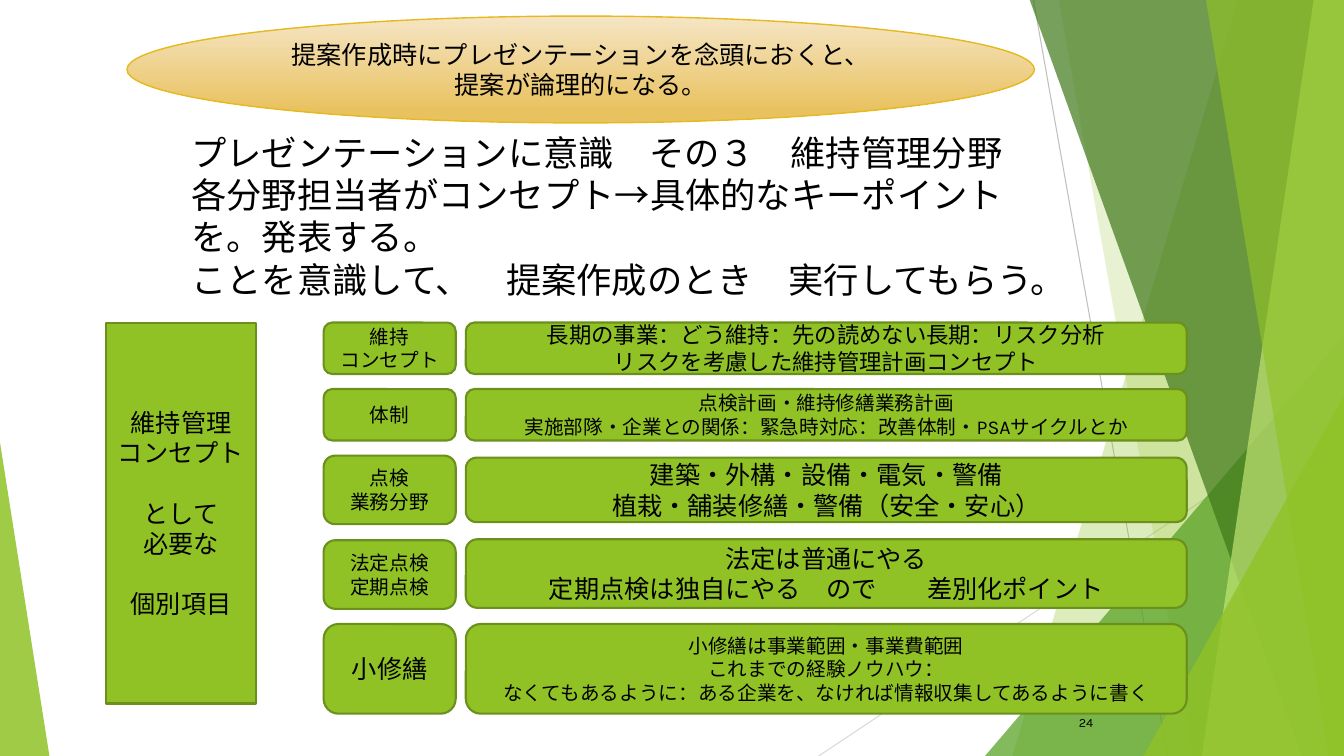
from dataclasses import dataclass

from lxml import etree
from pptx import Presentation
from pptx.dml.color import RGBColor
from pptx.enum.shapes import MSO_CONNECTOR, MSO_SHAPE as SHAPE
from pptx.enum.text import MSO_ANCHOR as ANCHOR, PP_ALIGN as ALIGN
from pptx.oxml.ns import qn
from pptx.util import Pt

PX = 9144  # EMU per px, 100 px to the inch
W, H = 1333, 750


@dataclass(frozen=True)
class Theme:
    font: str = "Karla"
    ink: str = "000000"
    green: str = "90C226"
    outline: str = "6B901C"
    leaf: str = "54A021"
    forest: str = "3F7819"
    lime: str = "C0E474"
    gold_light: str = "F5E5C5"
    gold: str = "E9C260"
    gold_line: str = "E6B91E"
    title: float = 25.2
    large: float = 18
    medium: float = 16
    small: float = 14
    number: float = 9
    blank_line: float = 21.6


T = Theme()
rgb = RGBColor.from_string


def write(sp, text, size, align=ALIGN.CENTER, anchor=ANCHOR.MIDDLE):
    """Write one paragraph per line; an empty line becomes space before the next."""
    tf = sp.text_frame
    tf.word_wrap = True
    tf.vertical_anchor = anchor
    for i, block in enumerate(text.split("\n\n")):
        for j, line in enumerate(block.split("\n")):
            p = tf.add_paragraph() if i or j else tf.paragraphs[0]
            p.text = line
            p.alignment = align
            p.font.name, p.font.size = T.font, Pt(size)
            p.font.color.rgb = rgb(T.ink)
            if i and not j:
                p.space_before = Pt(T.blank_line)


def add_box(kind, box, text, size, line=T.outline, width=1.5):
    sp = shapes.add_shape(kind, *(v * PX for v in box))
    sp.shadow.inherit = False
    sp.fill.solid()
    sp.fill.fore_color.rgb = rgb(T.green)
    sp.line.color.rgb = rgb(line)
    sp.line.width = Pt(width)
    write(sp, text, size)
    return sp


prs = Presentation()
prs.slide_width, prs.slide_height = W * PX, H * PX
s = prs.slides.add_slide(prs.slide_layouts[6])
shapes = s.shapes

# Thin background lines
for x1, y1, x2, y2, color in [(1025, 0, 1158, H, "BFBFBF"), (W, 403, 812, H, "D9D9D9")]:
    ln = shapes.add_connector(MSO_CONNECTOR.STRAIGHT, x1 * PX, y1 * PX, x2 * PX, y2 * PX)
    ln.line.color.rgb = rgb(color)
    ln.line.width = Pt(0.75)
    etree.SubElement(ln._element.spPr, qn("a:effectLst"))

# Translucent facets: a ribbon is (top x, bottom x) and reaches the right edge,
# a triangle is (left, top, width, apex position)
facets = [
    ((1228, 1004), T.green, 30),
    ((1050, 1183), T.green, 20),
    ((977, 333, 356, 1), T.leaf, 72),
    ((1021, 1291), T.forest, 70),
    ((1303, 1192), T.lime, 70),
    ((1196, 1318), T.green, 65),
    ((1134, 393, 199, 1), T.green, 80),
    ((0, 439, 49, 0), T.green, 85),
]
for geometry, color, alpha in facets:
    if len(geometry) == 2:
        top_x, bottom_x = geometry
        fb = shapes.build_freeform(top_x, -1, scale=PX)
        fb.add_line_segments([(W, -1), (W, H), (bottom_x, H)], close=True)
        sp = fb.convert_to_shape()
    else:
        left, top, width, apex = geometry
        sp = shapes.add_shape(SHAPE.ISOSCELES_TRIANGLE, left * PX, top * PX,
                              width * PX, (H - top) * PX)
        sp.adjustments[0] = apex
    sp.shadow.inherit = False
    sp.line.fill.background()
    sp.fill.solid()
    sp.fill.fore_color.rgb = rgb(color)
    clr = sp._element.spPr.find(qn("a:solidFill"))[0]
    etree.SubElement(clr, qn("a:alpha"), val=str(alpha * 1000))

# Title and slide number
title = shapes.add_textbox(180 * PX, 125 * PX, 977 * PX, 188 * PX)
write(title, "プレゼンテーションに意識　その３　維持管理分野\n"
             "各分野担当者がコンセプト→具体的なキーポイント\n"
             "を。発表する。　　\n"
             "ことを意識して、　提案作成のとき　実行してもらう。",
      T.title, ALIGN.LEFT, ANCHOR.TOP)
number = shapes.add_textbox(1019 * PX, 697 * PX, 75 * PX, 40 * PX)
write(number, "24", T.number, ALIGN.RIGHT)

# Heading block and the rows of items
add_box(SHAPE.RECTANGLE, (105, 320, 149, 378),
        "維持管理\nコンセプト\n\nとして\n必要な\n\n個別項目", T.large)

# Each cell: top, height, text, size
rows = [
    ((320, 51, "維持\nコンセプト", T.small),
     (320, 51, "長期の事業：どう維持：先の読めない長期：リスク分析\n"
               "リスクを考慮した維持管理計画コンセプト", T.medium)),
    ((386, 51, "体制", T.small),
     (386, 51, "点検計画・維持修繕業務計画\n"
               "実施部隊・企業との関係：緊急時対応：改善体制・PSAサイクルとか", T.small)),
    ((452, 68, "点検\n業務分野", T.small),
     (454, 64, "建築・外構・設備・電気・警備\n植栽・舗装修繕・警備（安全・安心）", T.large)),
    ((536, 68, "法定点検\n定期点検", T.small),
     (535, 68, "法定は普通にやる\n定期点検は独自にやる　ので　　差別化ポイント", T.large)),
    ((619, 89, "小修繕", T.large),
     (619, 89, "小修繕は事業範囲・事業費範囲\nこれまでの経験ノウハウ：\n"
               "なくてもあるように：ある企業を、なければ情報収集してあるように書く", T.small)),
]
columns = [(321, 131), (462, 715)]
for row in rows:
    for (left, width), (top, height, text, size) in zip(columns, row):
        add_box(SHAPE.ROUNDED_RECTANGLE, (left, top, width, height), text, size)

# Key message
message = add_box(SHAPE.OVAL, (126, 16, 900, 106),
                  "提案作成時にプレゼンテーションを念頭におくと、\n提案が論理的になる。",
                  T.large, T.gold_line, 1)
message.fill.gradient()
message.fill.gradient_angle = 270
for stop, position, color in zip(message.fill.gradient_stops, (0, 0.88), (T.gold_light, T.gold)):
    stop.position = position
    stop.color.rgb = rgb(color)

prs.save("out.pptx")
